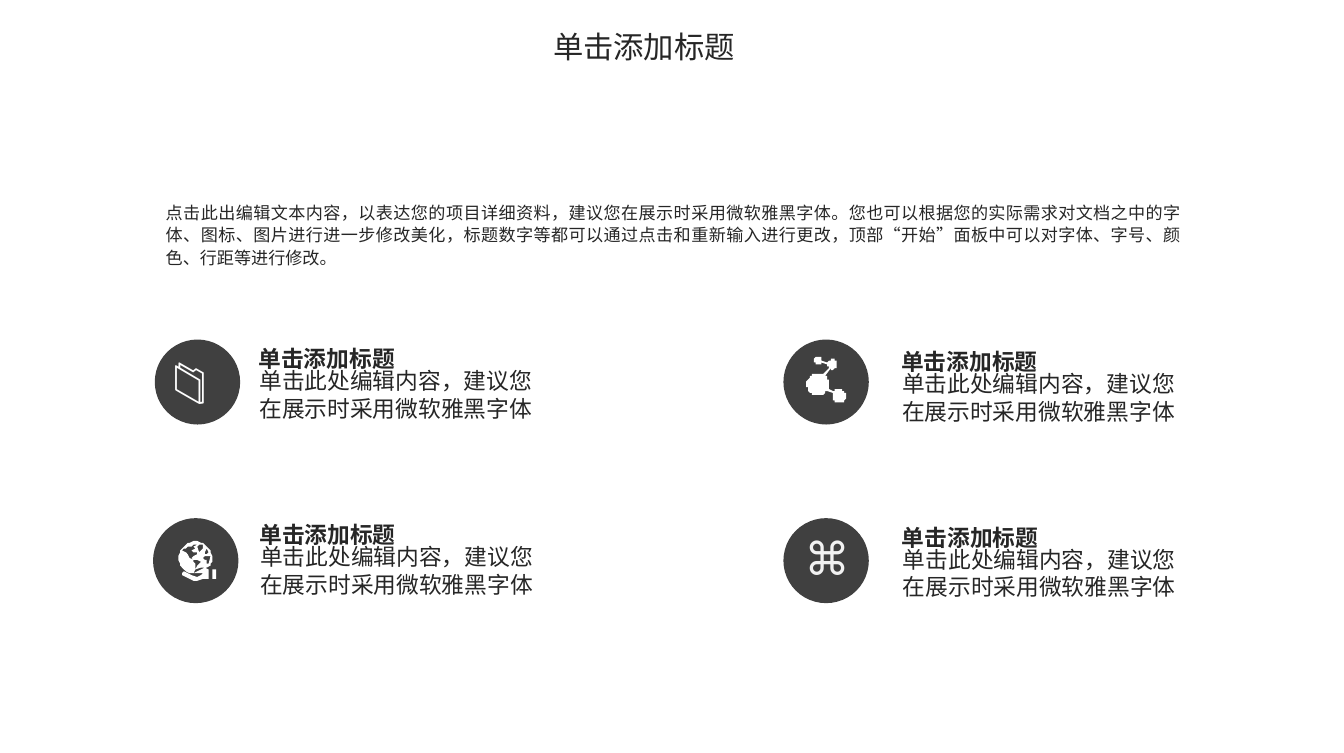
from math import asin, atan2, cos, pi, radians, sin
from lxml import etree
from pptx import Presentation
from pptx.dml.color import RGBColor
from pptx.enum import shapes, text
from pptx.oxml import ns
from pptx.util import Pt

TITLE = "单击添加标题"
INTRO = (
    "点击此出编辑文本内容，以表达您的项目详细资料，建议您在展示时采用微软雅黑字体。"
    "您也可以根据您的实际需求对文档之中的字体、图标、图片进行进一步修改美化，"
    "标题数字等都可以通过点击和重新输入进行更改，"
    "顶部“开始”面板中可以对字体、字号、颜色、行距等进行修改。"
)
HEAD = "单击添加标题"
BODY = "单击此处编辑内容，建议您在展示时采用微软雅黑字体"
DISCS = [[(81.6, 178.9), (413, 178.9)], [(80.7, 273), (413, 273)]]
SIGNS = [("📁", 86.4, 182.2, "white"), ("⌘", 419, 276.5, "pale")]

NODES = [(431.2, 189.8, 2.2), (438.8, 191.9, 2.7),
         (431.2, 202.4, 5.9), (442.2, 208.7, 3.7)]
WALK = [0, 1, 2, 3, 2, 1]
HALF = 0.6

GLOBE = (103, 293.8, 8.7)
LANDS = [
    [(133.5, 403), (134.5, 401), (136, 402), (138, 400), (140, 400),
     (141, 399), (144, 399), (142, 400), (143, 402), (140, 403),
     (142, 404.5), (144, 403.5), (145, 405), (142, 407), (140, 408),
     (142, 410), (139, 408.5), (137, 406), (136, 403.5)],
    [(142, 410.3), (145, 410), (147, 411.5), (145, 414.5), (143.3, 416),
     (143, 413), (141.5, 411.5)],
    [(149, 408), (150, 407), (153, 407), (154, 407.5), (153.3, 412),
     (152, 413), (151, 410), (149.5, 410)],
    [(150, 403.5), (152, 402), (153.2, 404), (152, 406), (150, 406)],
    [(144.5, 399.5), (146, 398), (149, 399), (148, 402), (146, 403.5),
     (145, 400.5)],
]
SHORE = [(142.5, 417.3), (147, 415.3), (151.5, 415)]
HAND = [
    [(153, 417), (153, 423), (149, 424), (145, 425), (141, 424.5),
     (134, 420.5), (133, 419), (135, 418.7), (140, 421), (144, 422),
     (147, 421), (148, 419), (145, 419.5), (142, 419.3), (147, 416.4),
     (150, 415.9)],
    [(155, 416), (155, 424), (158, 424), (158, 416)],
]

THEME = {
    "ink": "262626", "disc": "404040", "white": "FFFFFF", "pale": "F2F2F2",
    "title": 16, "item": 12, "intro": 9, "sign": 24,
    "cjk": "Noto Sans CJK SC", "lato": "Lato", "arial": "Arial",
}


def tint(name):
    return RGBColor.from_string(THEME[name])


def put(box, words, size, face, east, ink="ink", bold=False,
        pads=(5, 2.9, 5, 2.9), mid=False):
    frame = box.text_frame
    frame.word_wrap = True
    frame.auto_size = text.MSO_AUTO_SIZE.NONE
    (frame.margin_left, frame.margin_top,
     frame.margin_right, frame.margin_bottom) = map(Pt, pads)
    frame.vertical_anchor = text.MSO_ANCHOR.MIDDLE if mid else text.MSO_ANCHOR.TOP
    para = frame.paragraphs[0]
    para.alignment = text.PP_ALIGN.LEFT
    run = para.add_run()
    run.text = words
    run.font.size = Pt(THEME[size])
    run.font.bold = bold
    run.font.color.rgb = tint(ink)
    run.font.name = THEME[face]
    props = run._r.get_or_add_rPr()
    etree.SubElement(props, ns.qn("a:ea")).set("typeface", THEME[east])
    return para


def place(shape, *rect):
    shape.left, shape.top, shape.width, shape.height = map(Pt, rect)


def area(*rect):
    return slide.shapes.add_textbox(*map(Pt, rect))


def paint(shape, hue):
    shape.shadow.inherit = False
    shape.fill.solid()
    shape.fill.fore_color.rgb = tint(hue)
    shape.line.fill.background()


def arc(x, y, r, a, b):
    steps = 32
    turns = [a + (b - a) * i / steps for i in range(steps + 1)]
    return [(x + r * cos(t), y + r * sin(t)) for t in turns]


def trace(loops, hue):
    pen = slide.shapes.build_freeform(*loops[0][0], scale=Pt(1))
    pen.add_line_segments(loops[0][1:], close=True)
    for loop in loops[1:]:
        pen.move_to(*loop[0])
        pen.add_line_segments(loop[1:], close=True)
    paint(pen.convert_to_shape(), hue)


def scale(loop):
    return [(x * 0.72, y * 0.72) for x, y in loop]


def aim(a, b):
    return atan2(b[1] - a[1], b[0] - a[0])


def chain():
    pts = []
    for i, n in enumerate(WALK):
        node = NODES[n]
        gap = asin(HALF / node[2])
        start = aim(node, NODES[WALK[i - 1]]) + gap
        stop = aim(node, NODES[WALK[(i + 1) % len(WALK)]]) - gap
        pts += arc(*node, start, start + (stop - start) % (2 * pi))
    return pts


deck = Presentation()
deck.slide_width, deck.slide_height = Pt(708.5), Pt(396.7)
slide = deck.slides.add_slide(deck.slide_layouts[5])

head = slide.shapes.title
place(head, 284.4, 11.1, 234, 26.6)
put(head, TITLE, "title", "cjk", "lato", pads=(7.2, 3.6, 7.2, 3.6))

para = put(area(82.4, 102.6, 544.3, 41), INTRO, "intro", "cjk", "cjk")
para.alignment = text.PP_ALIGN.JUSTIFY
para.line_spacing = Pt(11.9)
para._p.get_or_add_pPr().set("hangingPunct", "0")

for row, line in enumerate(DISCS):
    for col, (x, y) in enumerate(line):
        disc = slide.shapes.add_shape(
            shapes.MSO_SHAPE.OVAL, *map(Pt, (x, y, 45, 44.8)))
        paint(disc, "disc")
        left = 131.3 + 338.8 * col + 0.4 * row
        top = 180.7 + 1.5 * col + 92.7 * row
        put(area(left + 5.4, top + 11.6, 150.5, 31), BODY, "item", "lato", "lato",
            pads=(0, 2.9, 5, 2.9), mid=True)
        put(area(left, top, 123.1, 16.6), HEAD, "item", "cjk", "lato",
            bold=True, mid=True)

for sign, x, y, hue in SIGNS:
    put(area(x, y, 35.3, 34.6), sign, "sign", "arial", "arial", hue)

trace([chain()], "white")
globe = arc(*GLOBE, radians(95), radians(390)) + scale(SHORE[::-1])
trace([globe] + [scale(loop) for loop in LANDS + HAND], "white")

deck.save("out.pptx")
